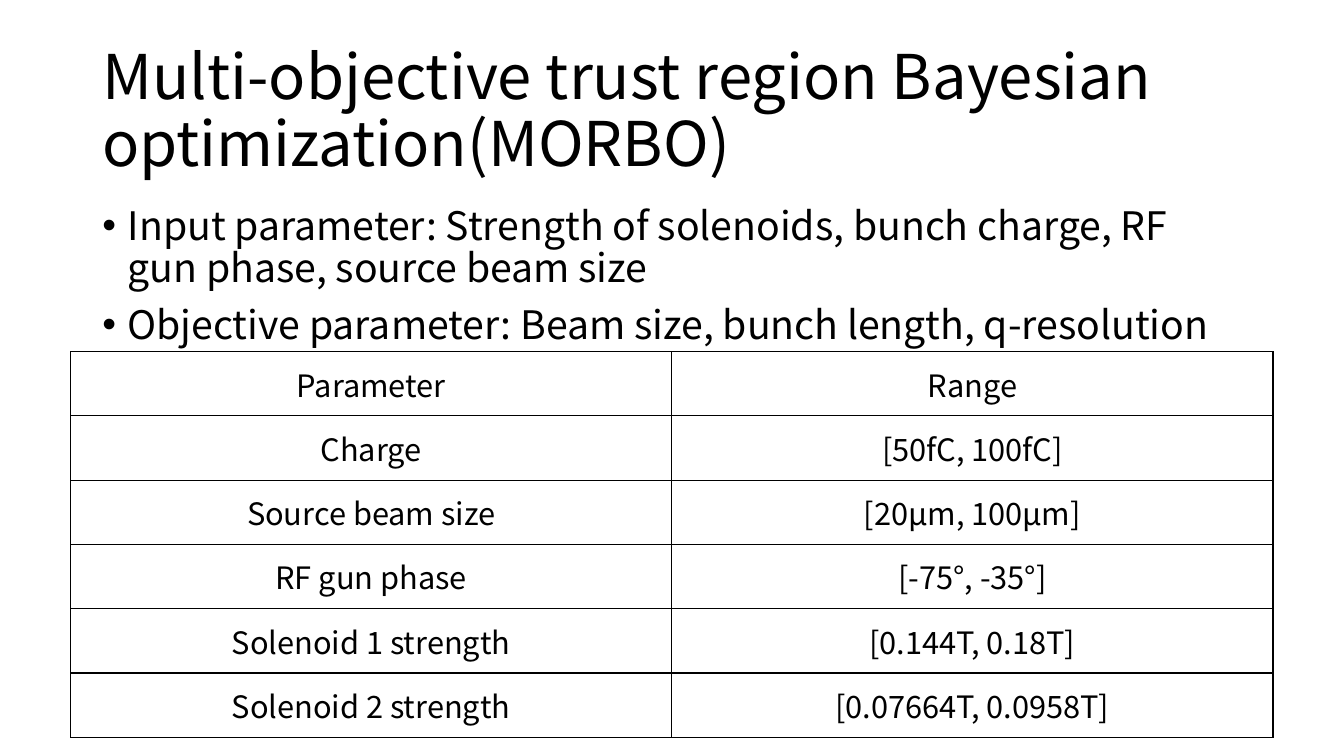
from dataclasses import dataclass

from lxml import etree
from pptx import Presentation
from pptx import util as u
from pptx.dml import color
from pptx.enum import text
from pptx.oxml import ns


@dataclass(frozen=True)
class Theme:
    font: str = "Noto Sans CJK KR"
    ink: str = "000000"
    paper: str = "FFFFFF"
    title_size: int = 44
    body_size: int = 28
    table_size: int = 22
    border_width: int = 1


THEME = Theme()

TITLE = "Multi-objective trust region Bayesian optimization(MORBO)"
PARAMETERS = [
    "Input parameter: Strength of solenoids, bunch charge, RF gun phase, source beam size",
    "Objective parameter: Beam size, bunch length, q-resolution",
]
RANGES = [
    ("Parameter", "Range"),
    ("Charge", "[50fC, 100fC]"),
    ("Source beam size", "[20μm, 100μm]"),
    ("RF gun phase", "[-75°, -35°]"),
    ("Solenoid 1 strength", "[0.144T, 0.18T]"),
    ("Solenoid 2 strength", "[0.07664T, 0.0958T]"),
]


def apply_format(target, values):
    for name, value in values.items():
        setattr(target, name, value)


def write(paragraph, wording, size, **layout):
    run = paragraph.add_run()
    run.text = wording
    apply_format(paragraph, layout)
    apply_format(run.font, {"name": THEME.font, "size": u.Pt(size)})
    run.font.color.rgb = color.RGBColor.from_string(THEME.ink)
    east_asian = etree.SubElement(run.font._element, ns.qn("a:ea"))
    east_asian.set("typeface", THEME.font)


def add_frame(slide, box, anchor):
    frame = slide.shapes.add_textbox(*box).text_frame
    apply_format(frame, {"word_wrap": True, "vertical_anchor": anchor})
    return frame


def add_title(slide, box):
    frame = add_frame(slide, box, text.MSO_ANCHOR.MIDDLE)
    write(frame.paragraphs[0], TITLE, THEME.title_size, line_spacing=0.9)


def add_bullets(slide, box):
    frame = add_frame(slide, box, text.MSO_ANCHOR.TOP)
    for index, parameter in enumerate(PARAMETERS):
        paragraph = frame.add_paragraph() if index else frame.paragraphs[0]
        write(paragraph, parameter, THEME.body_size,
              line_spacing=0.9, space_before=u.Pt(10))
        properties = paragraph._p.get_or_add_pPr()
        indent = u.Cm(0.64)
        properties.set("marL", str(indent))
        properties.set("indent", str(-indent))
        etree.SubElement(properties, ns.qn("a:buFont")).set("typeface", "Arial")
        etree.SubElement(properties, ns.qn("a:buChar")).set("char", "•")


def draw_borders(cell):
    properties = cell._tc.get_or_add_tcPr()
    for side in ("lnL", "lnR", "lnT", "lnB"):
        border = etree.SubElement(properties, ns.qn(f"a:{side}"))
        border.set("w", str(u.Pt(THEME.border_width)))
        fill = etree.SubElement(border, ns.qn("a:solidFill"))
        etree.SubElement(fill, ns.qn("a:srgbClr")).set("val", THEME.ink)


def add_ranges(slide, box):
    table = slide.shapes.add_table(len(RANGES), len(RANGES[0]), *box).table
    apply_format(table, {"first_row": False, "horz_banding": False})
    for row, entries in enumerate(RANGES):
        for column, entry in enumerate(entries):
            cell = table.cell(row, column)
            cell.vertical_anchor = text.MSO_ANCHOR.MIDDLE
            write(cell.text_frame.paragraphs[0], entry, THEME.table_size,
                  alignment=text.PP_ALIGN.CENTER)
            draw_borders(cell)
            cell.fill.solid()
            cell.fill.fore_color.rgb = color.RGBColor.from_string(THEME.paper)


def build_optimization_slide(deck):
    slide = deck.slides.add_slide(deck.slide_layouts[6])
    left, width = u.Cm(2.33), u.Cm(29.21)
    add_title(slide, (left, u.Cm(1.01), width, u.Cm(3.68)))
    add_bullets(slide, (left, u.Cm(5.08), width, u.Cm(12.09)))
    add_ranges(slide, (u.Cm(1.78), u.Cm(8.86), u.Cm(30.3), u.Cm(9.72)))


def main():
    deck = Presentation()
    apply_format(deck, {"slide_width": u.Cm(33.87), "slide_height": u.Cm(19.05)})
    build_optimization_slide(deck)
    deck.save("out.pptx")


if __name__ == "__main__":
    main()
